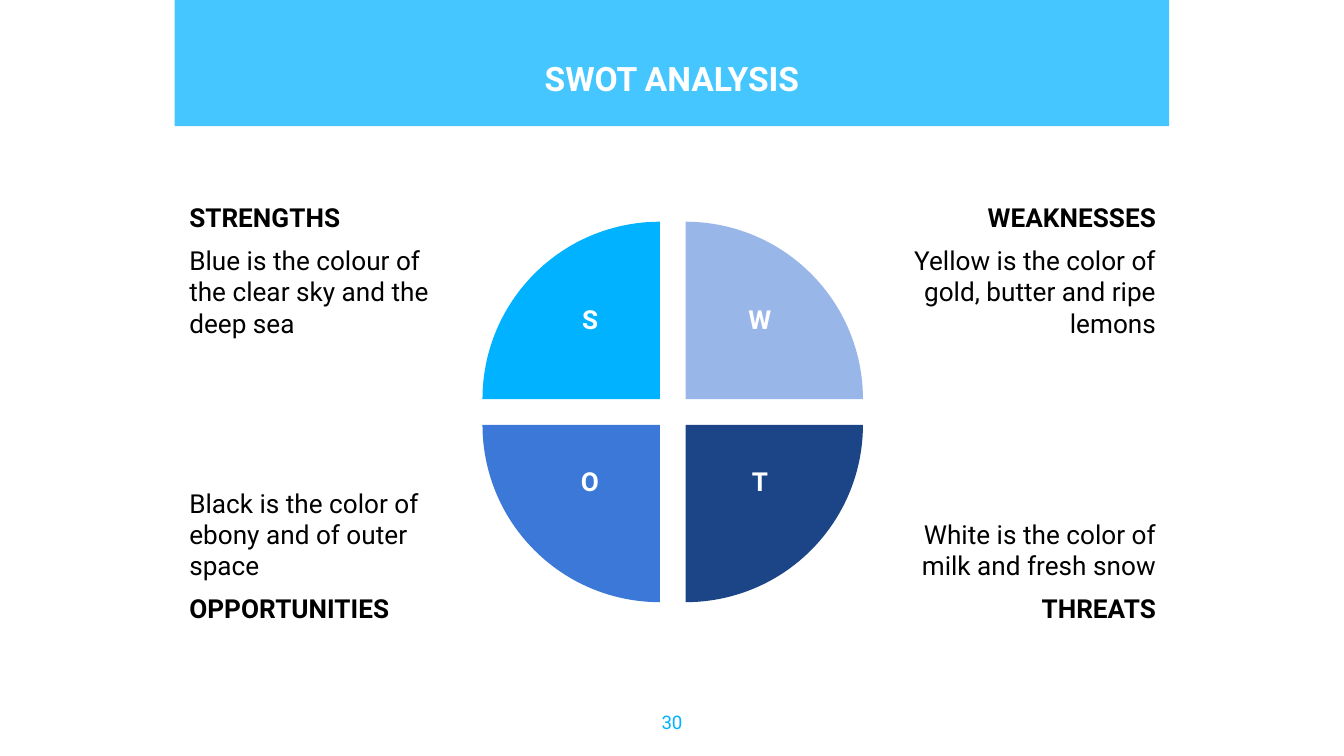
from dataclasses import dataclass

from pptx import Presentation
from pptx.dml.color import RGBColor as Color
from pptx.enum.shapes import MSO_SHAPE as Preset
from pptx.enum.text import MSO_ANCHOR as Anchor, MSO_AUTO_SIZE as AutoSize, PP_ALIGN as Align
from pptx.util import Pt


@dataclass(frozen=True)
class Theme:
    font: str = "Roboto"
    title_size: float = 18
    text_size: float = 14
    number_size: float = 10
    white: str = "FFFFFF"
    black: str = "000000"
    band: str = "45C6FF"
    strengths: str = "00B2FF"
    weaknesses: str = "99B6E9"
    threats: str = "1C4587"
    opportunities: str = "3C78D8"


THEME = Theme()


@dataclass(frozen=True)
class Box:
    left: float
    top: float
    width: float
    height: float

    def inner(self, left, top, width, height):
        return Box(self.left + left, self.top + top, width, height)

    def points(self):
        return Pt(self.left), Pt(self.top), Pt(self.width), Pt(self.height)


def add_text(frame, text, *, size=THEME.text_size, color=THEME.black, bold=False,
             align=Align.LEFT, before=0, after=0):
    para = frame.paragraphs[0]
    if para.runs:
        para = frame.add_paragraph()
    para.alignment = align
    para.space_before, para.space_after = Pt(before), Pt(after)
    span = para.add_run()
    span.text = text
    span.font.name = THEME.font
    span.font.size = Pt(size)
    span.font.bold = bold
    span.font.color.rgb = Color.from_string(color)


def set_frame(frame, *, left=7.2, top=7.2, right=7.2, bottom=7.2, anchor=Anchor.TOP):
    frame.word_wrap = True
    frame.auto_size = AutoSize.NONE
    frame.vertical_anchor = anchor
    frame.margin_left, frame.margin_right = Pt(left), Pt(right)
    frame.margin_top, frame.margin_bottom = Pt(top), Pt(bottom)
    return frame


def add_filled(page, preset, box, color):
    shape = page.shapes.add_shape(preset, *box.points())
    shape.shadow.inherit = False
    shape.fill.solid()
    shape.fill.fore_color.rgb = Color.from_string(color)
    shape.line.fill.background()
    return shape


def add_header(page, box, text):
    band = add_filled(page, Preset.RECTANGLE, box, THEME.band)
    title = page.shapes.title
    title.left, title.top, title.width, title.height = box.inner(0, 23.8, box.width, 39.6).points()
    band._element.addnext(title._element)
    add_text(set_frame(title.text_frame), text, size=THEME.title_size,
             color=THEME.white, bold=True, align=Align.CENTER)


def add_card(page, box, heading, body, *, on_right, at_bottom):
    card = add_filled(page, Preset.RECTANGLE, box, THEME.white)
    card.line.color.rgb = Color.from_string(THEME.white)
    card.line.width = Pt(0.75)
    wheel_side = "left" if on_right else "right"
    frame = set_frame(card.text_frame, anchor=Anchor.BOTTOM if at_bottom else Anchor.TOP,
                      **{wheel_side: 108})
    lines = [(heading, True), (body, False)]
    if at_bottom:
        lines.reverse()
    for index, (text, bold) in enumerate(lines):
        add_text(frame, text, bold=bold, align=Align.RIGHT if on_right else Align.LEFT,
                 before=6 * index, after=6 * index)


def add_cards(page, box):
    cards = [
        ("STRENGTHS", "Blue is the colour of the clear sky and the deep sea"),
        ("WEAKNESSES", "Yellow is the color of gold, butter and ripe lemons"),
        ("OPPORTUNITIES", "Black is the color of ebony and of outer space"),
        ("THREATS", "White is the color of milk and fresh snow"),
    ]
    width, height = 260.6, 113.8
    for index, (heading, body) in enumerate(cards):
        row, column = divmod(index, 2)
        place = box.inner(column * (box.width - width), row * (box.height - height), width, height)
        add_card(page, place, heading, body, on_right=column == 1, at_bottom=row == 1)


def add_wheel(page, box):
    gap = 13.7
    size = box.width - gap
    quarters = [
        ("S", THEME.strengths, 0, 0, 27.4),
        ("W", THEME.weaknesses, 0, 1, 51.8),
        ("T", THEME.threats, 1, 1, 28.8),
        ("O", THEME.opportunities, 1, 0, 33.1),
    ]
    for turn, (letter, color, row, column, width) in enumerate(quarters):
        pie = add_filled(page, Preset.PIE, box.inner(column * gap, row * gap, size, size), color)
        pie.adjustments[0], pie.adjustments[1] = 108, 162
        pie.rotation = 90 * turn
    for letter, color, row, column, width in quarters:
        place = box.inner(57.6 + 91 * column - width / 2, 40 + 87 * row, width, 35)
        label = page.shapes.add_textbox(*place.points())
        add_text(set_frame(label.text_frame, top=3.6, bottom=3.6), letter,
                 color=THEME.white, bold=True, align=Align.CENTER)


def add_page_number(page, box, number):
    label = page.shapes.add_textbox(*box.points())
    add_text(set_frame(label.text_frame), number, size=THEME.number_size,
             color=THEME.strengths, align=Align.CENTER)


def main():
    deck = Presentation()
    deck.slide_width, deck.slide_height = Pt(720), Pt(405)
    page = deck.slides.add_slide(deck.slide_layouts.get_by_name("Title Only"))
    add_header(page, Box(93.6, 0, 532.8, 67.6), "SWOT ANALYSIS")
    add_page_number(page, Box(338.4, 373.7, 43.2, 31), "30")
    add_cards(page, Box(94.3, 100.8, 532.1, 240.5))
    add_wheel(page, Box(258.5, 118.8, 203.8, 203.8))
    deck.save("out.pptx")


if __name__ == "__main__":
    main()
